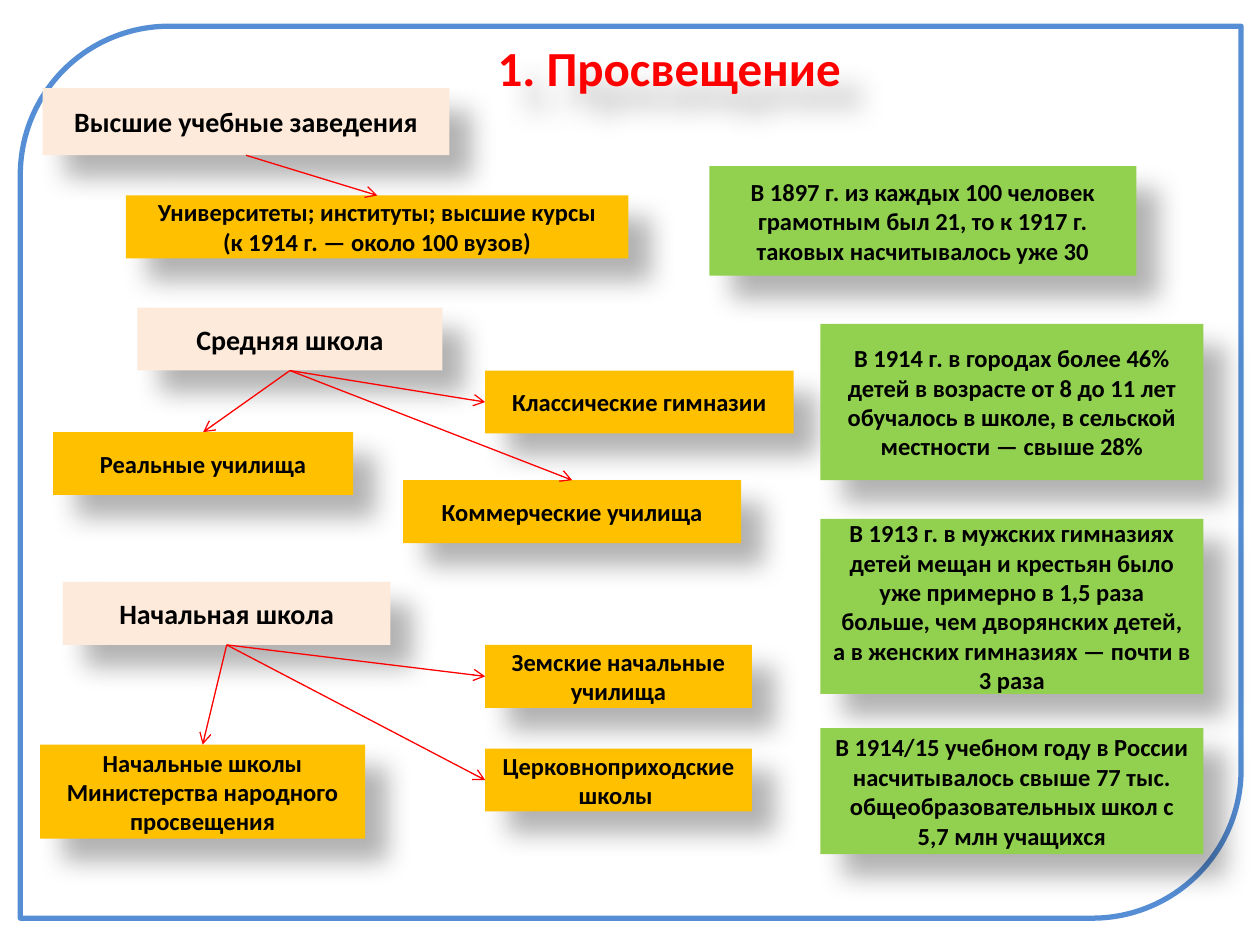
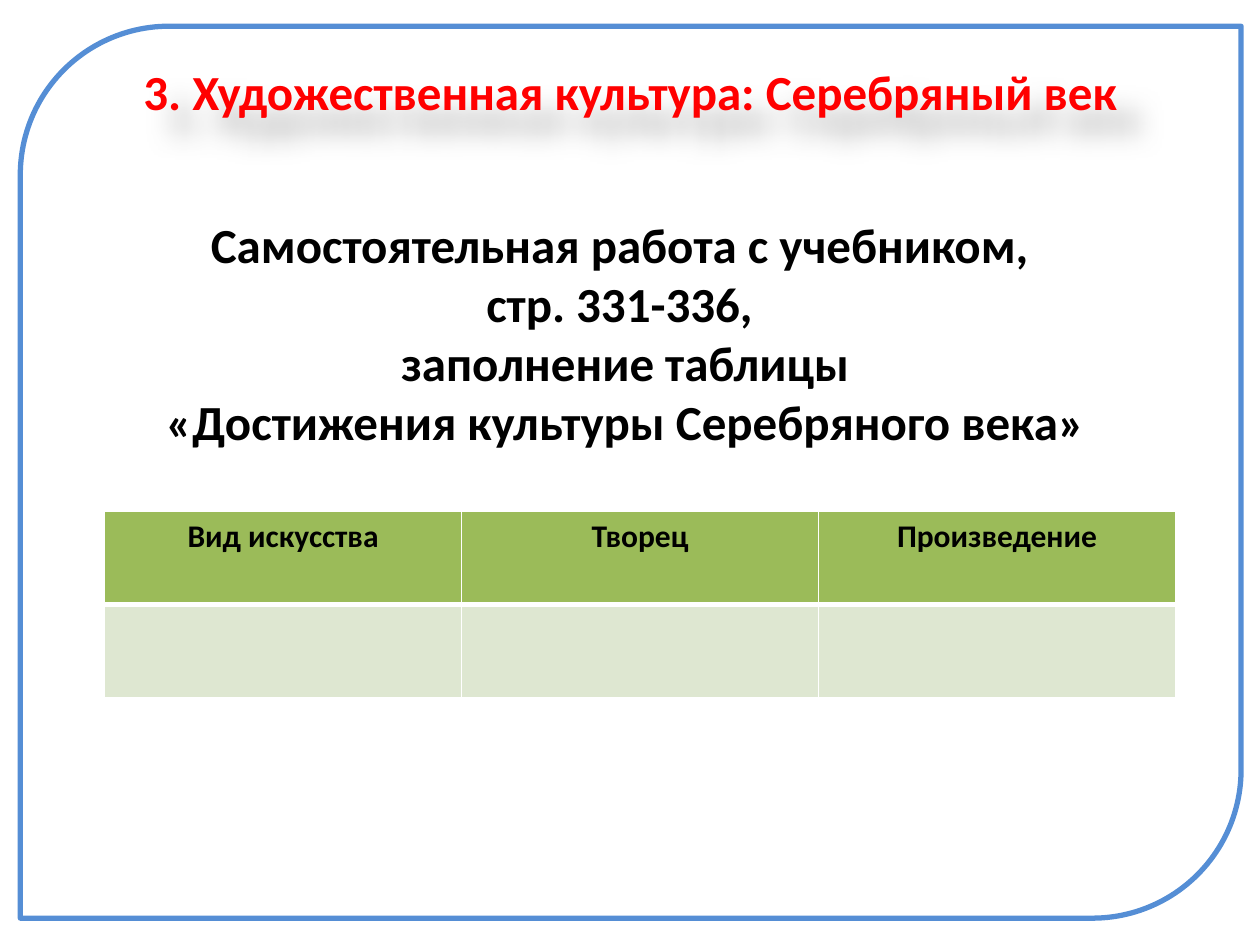
from lxml import etree
from pptx import Presentation
from pptx.dml.color import RGBColor
from pptx.enum import shapes, text
from pptx.oxml import ns
from pptx.util import Cm, Pt

RED = RGBColor(0xFF, 0x00, 0x00)
BLACK = RGBColor(0x00, 0x00, 0x00)
WHITE = RGBColor(0xFF, 0xFF, 0xFF)
FRAME_BLUE = RGBColor(0x55, 0x8E, 0xD5)
LEVEL_PEACH = RGBColor(0xFD, 0xEA, 0xDA)
SCHOOL_AMBER = RGBColor(0xFF, 0xC0, 0x00)
FACT_GREEN = RGBColor(0x92, 0xD0, 0x50)
HEADER_GREEN = RGBColor(0x9B, 0xBB, 0x59)
ROW_GREEN = RGBColor(0xDE, 0xE7, 0xD1)

FONT = "Calibri"
FRAME = (0.41, 0.53, 24.61, 17.98)
BOX_HEIGHT = 1.27
TOP, LEFT, BOTTOM = 0, 1, 2  # connection sites of a rectangle

# Box of each level, its name, and its schools:
# offset from the level, width, height, side the arrow reaches, lines
SCHOOL_LEVELS = [
    ((0.86, 1.78, 8.2, 1.35), "Высшие учебные заведения", [
        (1.68, 2.16, 10.13, BOX_HEIGHT, TOP,
         ["Университеты; институты; высшие курсы", "(к 1914 г. — около 100 вузов)"]),
    ]),
    ((2.77, 6.2, 6.15, BOX_HEIGHT), "Средняя школа", [
        (7.01, 1.27, 6.22, BOX_HEIGHT, LEFT, ["Классические гимназии"]),
        (-1.7, 2.51, 6.05, BOX_HEIGHT, TOP, ["Реальные училища"]),
        (5.36, 3.48, 6.81, BOX_HEIGHT, TOP, ["Коммерческие училища"]),
    ]),
    ((1.27, 11.73, 6.6, BOX_HEIGHT), "Начальная школа", [
        (8.51, 3.36, 5.38, BOX_HEIGHT, LEFT, ["Церковноприходские", "школы "]),
        (8.51, 1.27, 5.38, BOX_HEIGHT, LEFT, ["Земские начальные", "училища"]),
        (-0.46, 3.28, 6.55, 1.9, TOP,
         ["Начальные школы", "Министерства народного", "просвещения"]),
    ]),
]

# Offset from the facts region, width, height, wording
FACTS = [
    (0, 0, 8.61, 2.21,
     "В 1897 г. из каждых 100 человек грамотным был 21, то к 1917 г. "
     "таковых насчитывалось уже 30"),
    (2.24, 3.18, 7.72, 3.15,
     "В 1914 г. в городах более 46% детей в возрасте от 8 до 11 лет "
     "обучалось в школе, в сельской местности — свыше 28%"),
    (2.24, 7.11, 7.72, 3.53,
     "В 1913 г. в мужских гимназиях детей мещан и крестьян было уже "
     "примерно в 1,5 раза больше, чем дворянских детей, а в женских "
     "гимназиях — почти в 3 раза"),
    (2.24, 11.33, 7.72, 2.54,
     "В 1914/15 учебном году в России насчитывалось свыше 77 тыс. "
     "общеобразовательных школ с 5,7 млн учащихся"),
]

ASSIGNMENT = [
    "Самостоятельная работа с учебником, ",
    "стр. 331-336, ",
    "заполнение таблицы",
    "«Достижения культуры Серебряного века»",
]
TABLE_HEADERS = ["Вид искусства", "Творец", "Произведение"]


def cm_box(box):
    return [Cm(length) for length in box]


def write_lines(frame, lines, size, color=BLACK):
    """Write each line as a centred bold paragraph."""
    for index, line in enumerate(lines):
        paragraph = frame.add_paragraph() if index else frame.paragraphs[0]
        paragraph.alignment = text.PP_ALIGN.CENTER
        run = paragraph.add_run()
        run.text = line
        run.font.name = FONT
        run.font.size = Pt(size)
        run.font.bold = True
        run.font.color.rgb = color


def cast_shadow(shape):
    """Give a soft black shadow falling down and to the right."""
    shape.shadow.inherit = False
    effects = shape._element.spPr.find(ns.qn("a:effectLst"))
    shadow = etree.SubElement(
        effects, ns.qn("a:outerShdw"), blurRad=str(Pt(15)), dist=str(Pt(18)),
        dir=str(45 * 60000), algn="tl", rotWithShape="0")
    color = etree.SubElement(shadow, ns.qn("a:srgbClr"), val=str(BLACK))
    etree.SubElement(color, ns.qn("a:alpha"), val="30000")


def add_framed_slide(deck, title_box, title):
    slide = deck.slides.add_slide(deck.slide_layouts[5])
    border = slide.shapes.add_shape(
        shapes.MSO_SHAPE.ROUND_2_DIAG_RECTANGLE, *cm_box(FRAME))
    border.shadow.inherit = False
    border.fill.background()
    border.line.color.rgb = FRAME_BLUE
    border.line.width = Pt(3)

    heading = slide.shapes.title
    heading.left, heading.top, heading.width, heading.height = cm_box(title_box)
    heading.text_frame.auto_size = text.MSO_AUTO_SIZE.NONE
    heading.text_frame.vertical_anchor = text.MSO_ANCHOR.MIDDLE
    write_lines(heading.text_frame, [title], 28, RED)
    cast_shadow(heading)
    return slide


def add_card(slide, box, lines, fill, size=14):
    card = slide.shapes.add_shape(shapes.MSO_SHAPE.RECTANGLE, *cm_box(box))
    card.fill.solid()
    card.fill.fore_color.rgb = fill
    card.line.fill.background()
    cast_shadow(card)
    card.text_frame.word_wrap = True
    card.text_frame.vertical_anchor = text.MSO_ANCHOR.MIDDLE
    write_lines(card.text_frame, lines, size)
    return card


def add_arrow(slide, level, school, side):
    arrow = slide.shapes.add_connector(shapes.MSO_CONNECTOR.STRAIGHT, 0, 0, 0, 0)
    arrow.begin_connect(level, BOTTOM)
    arrow.end_connect(school, side)
    arrow.line.color.rgb = RED
    arrow.line.width = Pt(0.75)
    etree.SubElement(arrow.line._get_or_add_ln(), ns.qn("a:tailEnd"), type="arrow")
    etree.SubElement(arrow._element.spPr, ns.qn("a:effectLst"))


def add_school_level(slide, box, name, schools):
    """Place a level in its box, with its schools around it."""
    left, top = box[:2]
    level = add_card(slide, box, [name], LEVEL_PEACH, 16)
    targets = [
        (add_card(slide, (left + dx, top + dy, width, height), lines, SCHOOL_AMBER), side)
        for dx, dy, width, height, side, lines in schools
    ]
    for school, side in targets:
        add_arrow(slide, level, school, side)


def add_facts(slide, left, top):
    for dx, dy, width, height, fact in FACTS:
        add_card(slide, (left + dx, top + dy, width, height), [fact], FACT_GREEN)


def add_assignment(slide, box):
    assignment = slide.shapes.add_textbox(*cm_box(box)).text_frame
    assignment.word_wrap = True
    write_lines(assignment, ASSIGNMENT, 28)


def style_cell(cell, fill, bottom_width):
    properties = cell._tc.get_or_add_tcPr()
    for edge, width in (("L", 1), ("R", 1), ("T", 1), ("B", bottom_width)):
        border = etree.SubElement(properties, ns.qn(f"a:ln{edge}"), w=str(Pt(width)))
        solid = etree.SubElement(border, ns.qn("a:solidFill"))
        etree.SubElement(solid, ns.qn("a:srgbClr"), val=str(WHITE))
    cell.fill.solid()
    cell.fill.fore_color.rgb = fill


def add_achievements_table(slide, box):
    table = slide.shapes.add_table(2, len(TABLE_HEADERS), *cm_box(box)).table
    for column, header in enumerate(TABLE_HEADERS):
        style_cell(table.cell(0, column), HEADER_GREEN, 3)
        style_cell(table.cell(1, column), ROW_GREEN, 1)
        write_lines(table.cell(0, column).text_frame, [header], 18)


def build_education_slide(deck):
    slide = add_framed_slide(deck, (2.06, 0.76, 22.86, 1.17), "1. Просвещение")
    for box, name, schools in SCHOOL_LEVELS:
        add_school_level(slide, box, name, schools)
    add_facts(slide, 14.3, 3.35)


def build_silver_age_slide(deck):
    slide = add_framed_slide(
        deck, (1.27, 0.76, 22.86, 2.16), "3. Художественная культура: Серебряный век")
    add_assignment(slide, (2.9, 4.2, 19.4, 5))
    add_achievements_table(slide, (2.11, 10.31, 21.59, 3.76))


def main():
    deck = Presentation()
    deck.slide_width, deck.slide_height = Cm(25.4), Cm(19.05)
    build_education_slide(deck)
    build_silver_age_slide(deck)
    deck.save("out.pptx")


if __name__ == "__main__":
    main()
